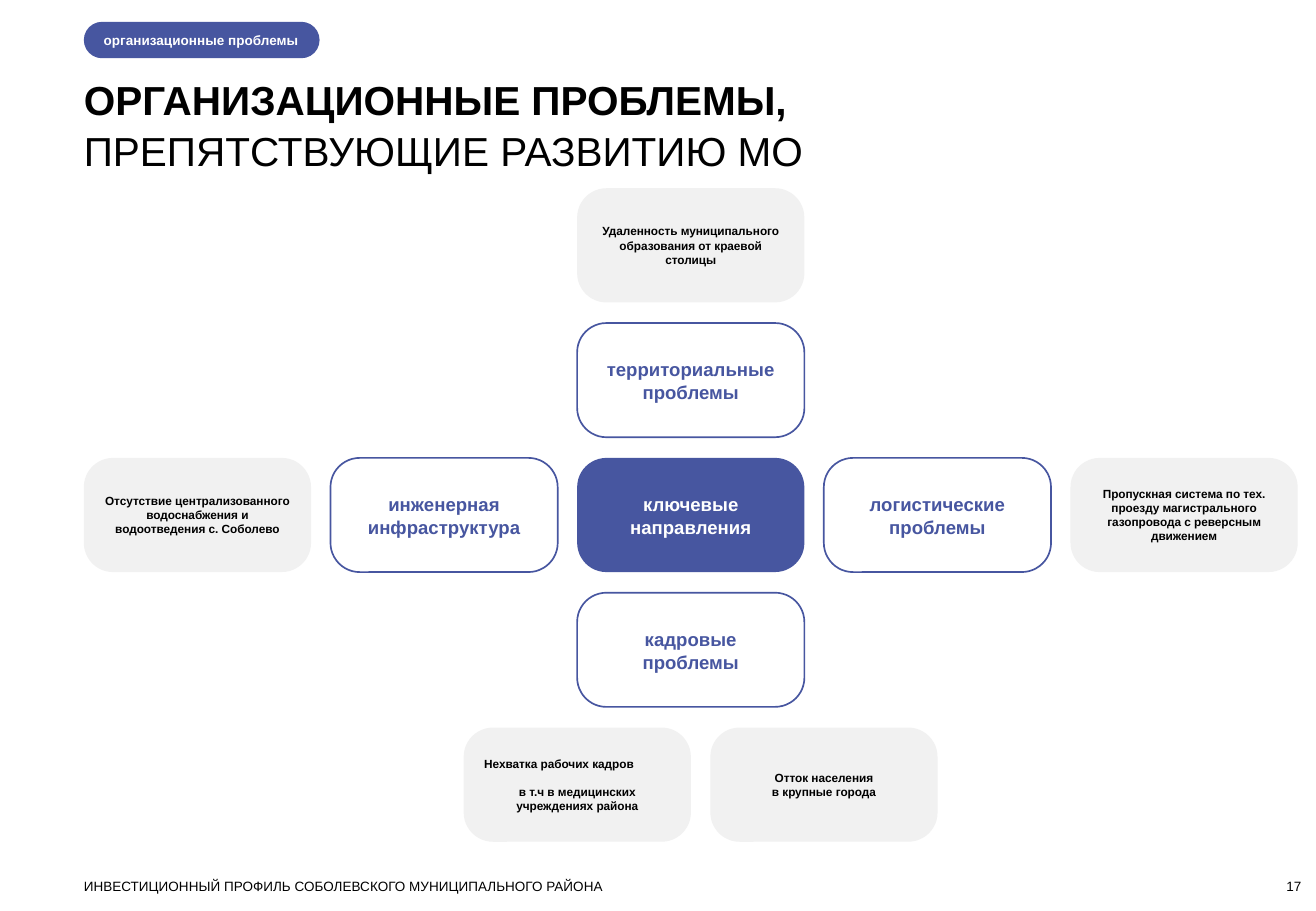
import pptx
import pptx.dml.color
import pptx.enum.shapes
import pptx.enum.text
import pptx.util
from dataclasses import dataclass

Inches = pptx.util.Inches
ALIGN = pptx.enum.text.PP_ALIGN
ANCHOR = pptx.enum.text.MSO_ANCHOR


@dataclass(frozen=True)
class Theme:
    font: str = "Arial"
    accent: str = "4756A0"
    pale: str = "F1F1F1"
    white: str = "FFFFFF"
    black: str = "000000"
    title_size: int = 24
    direction_size: int = 11
    small_size: int = 8
    problem_size: int = 7
    loose_spacing: float = 1.05


class ProblemMap:
    """Cards on a grid of equal columns and rows, with headings around it."""

    LEFT, TOP = 0.69, 1.55
    COLUMN_STEP, ROW_STEP = 2.03, 1.11
    CARD_WIDTH, CARD_HEIGHT = 1.87, 0.94

    def __init__(self, slide, theme):
        self.slide = slide
        self.theme = theme

    def color(self, value):
        return pptx.dml.color.RGBColor.from_string(value)

    def set_text(self, frame, text, size, color, bold=False, align=ALIGN.LEFT,
                 anchor=ANCHOR.TOP, margins=None, spacing=None):
        frame.word_wrap = True
        frame.vertical_anchor = anchor
        if margins:
            (frame.margin_left, frame.margin_top,
             frame.margin_right, frame.margin_bottom) = map(Inches, margins)
        frame.text = text
        for paragraph in frame.paragraphs:
            paragraph.alignment = align
            if spacing:
                paragraph.line_spacing = spacing
            for run in paragraph.runs:
                run.font.name = self.theme.font
                run.font.size = pptx.util.Pt(size)
                run.font.bold = bold
                run.font.color.rgb = self.color(color)
        return frame

    def label(self, box, text, size, **style):
        caption = self.slide.shapes.add_textbox(*map(Inches, box))
        return self.set_text(caption.text_frame, text, size, self.theme.black,
                             margins=(0, 0, 0, 0), **style)

    def rounded(self, box, radius, fill=None, line=None):
        card = self.slide.shapes.add_shape(
            pptx.enum.shapes.MSO_SHAPE.ROUNDED_RECTANGLE, *map(Inches, box))
        card.adjustments[0] = radius
        card.shadow.inherit = False
        if fill:
            card.fill.solid()
            card.fill.fore_color.rgb = self.color(fill)
        else:
            card.fill.background()
        if line:
            card.line.color.rgb = self.color(line)
            card.line.width = pptx.util.Pt(1)
        else:
            card.line.fill.background()
        return card.text_frame

    def tag(self, box, text):
        self.set_text(self.rounded(box, 0.5, fill=self.theme.accent), text,
                      self.theme.small_size, self.theme.white, bold=True,
                      anchor=ANCHOR.MIDDLE, margins=(0.12, 0, 0, 0))

    def card(self, column, row, text, size, color, fill=None, line=None, spacing=None):
        box = (self.LEFT + column * self.COLUMN_STEP, self.TOP + row * self.ROW_STEP,
               self.CARD_WIDTH, self.CARD_HEIGHT)
        return self.set_text(self.rounded(box, 0.256, fill, line), text, size, color,
                             bold=True, align=ALIGN.CENTER, anchor=ANCHOR.MIDDLE,
                             spacing=spacing)

    def center(self, column, row, text):
        self.card(column, row, text, self.theme.direction_size, self.theme.white,
                  fill=self.theme.accent, spacing=self.theme.loose_spacing)

    def direction(self, column, row, text):
        self.card(column, row, text, self.theme.direction_size, self.theme.accent,
                  line=self.theme.accent, spacing=self.theme.loose_spacing)

    def problem(self, column, row, text):
        return self.card(column, row, text, self.theme.problem_size,
                         self.theme.black, fill=self.theme.pale)


def main():
    theme = Theme()
    deck = pptx.Presentation()
    deck.slide_width, deck.slide_height = Inches(10.83), Inches(7.5)
    page = ProblemMap(deck.slides.add_slide(deck.slide_layouts[6]), theme)

    # Heading
    title = page.label((0.69, 0.6, 10.02, 0.81),
                       "ОРГАНИЗАЦИОННЫЕ ПРОБЛЕМЫ,\nПРЕПЯТСТВУЮЩИЕ РАЗВИТИЮ МО",
                       theme.title_size, spacing=theme.loose_spacing)
    title.paragraphs[0].runs[0].font.bold = True
    page.tag((0.69, 0.18, 1.94, 0.3), "организационные проблемы")

    # Key directions around the center
    page.center(2, 2, "ключевые направления")
    for column, row, text in [
        (2, 1, "территориальные проблемы"),
        (1, 2, "инженерная инфраструктура"),
        (3, 2, "логистические проблемы"),
        (2, 3, "кадровые проблемы"),
    ]:
        page.direction(column, row, text)

    # Problems at the outer ends
    for column, row, text in [
        (2, 0, "Удаленность муниципального образования от краевой столицы"),
        (0, 2, "Отсутствие централизованного водоснабжения и водоотведения с. Соболево"),
        (4, 2, "Пропускная система по тех. проезду магистрального газопровода "
               "с реверсным движением"),
        (2.54, 4, "Отток населения\nв крупные города"),
    ]:
        page.problem(column, row, text)

    staff = page.problem(1.54, 4, "Нехватка рабочих кадров\n"
                                  "в т.ч в медицинских учреждениях района")
    shortage = staff.paragraphs[0]
    shortage.alignment = ALIGN.LEFT
    shortage.space_after = pptx.util.Pt(8)

    # Footer
    page.label((0.69, 7.23, 4.66, 0.13),
               "ИНВЕСТИЦИОННЫЙ ПРОФИЛЬ СОБОЛЕВСКОГО МУНИЦИПАЛЬНОГО РАЙОНА",
               theme.small_size)
    page.label((9.91, 7.23, 0.8, 0.13), "17", theme.small_size,
               align=ALIGN.RIGHT, anchor=ANCHOR.BOTTOM)

    deck.save("out.pptx")


if __name__ == "__main__":
    main()
